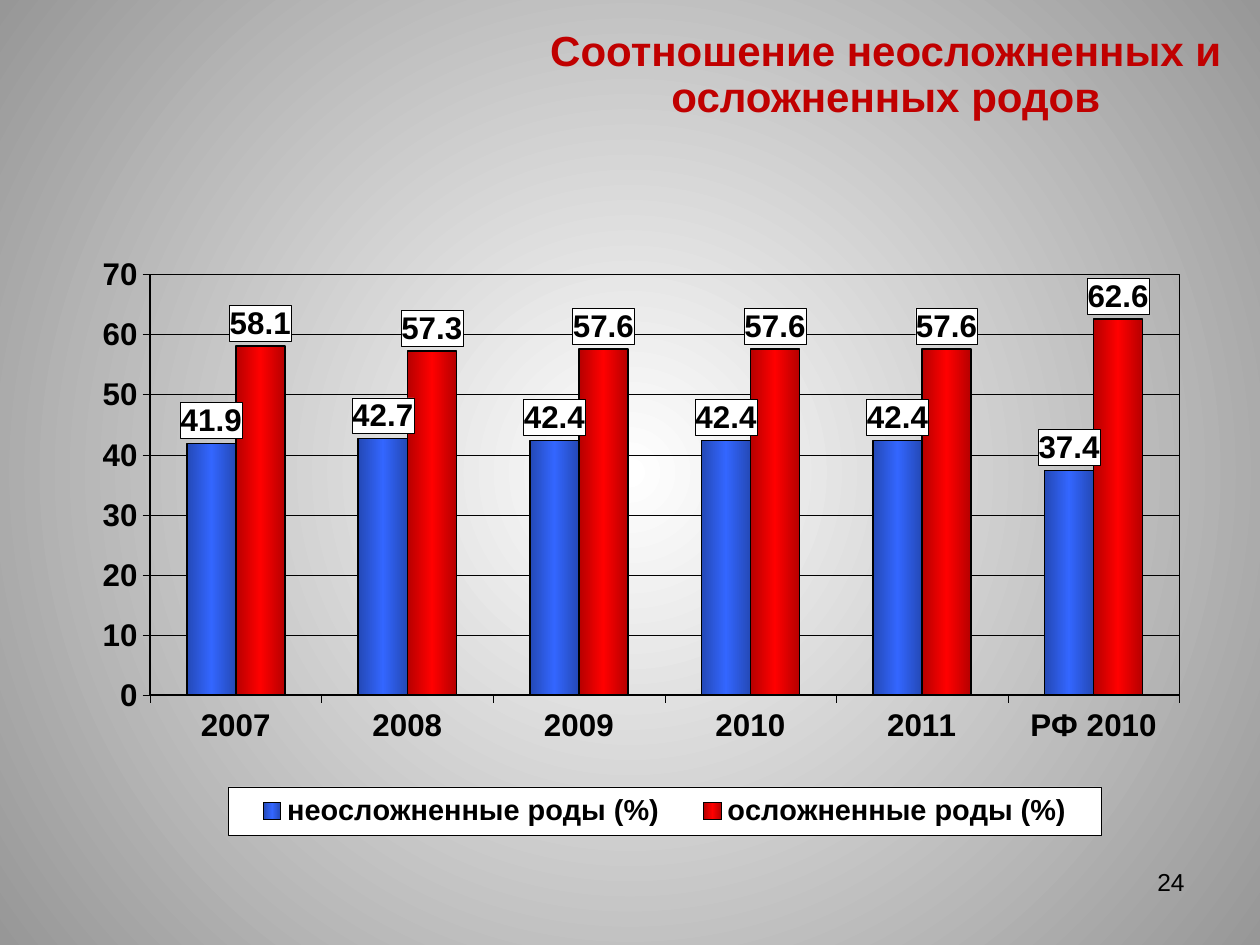
import pptx
import pptx.util
import pptx.oxml
import pptx.oxml.ns
import pptx.chart.data
import pptx.dml.color
import pptx.enum.chart
import pptx.enum.text

Pt = pptx.util.Pt
RGB = pptx.dml.color.RGBColor.from_string
qn = pptx.oxml.ns.qn
enum = pptx.enum.chart
text = pptx.enum.text
names = pptx.oxml.ns.nsdecls("a", "c")
hues = {"black": "000000", "white": "FFFFFF", "gray": "979797", "title": "C00000",
        "navy": "2449B6", "blue": "3366FF", "wine": "B60000", "red": "FF0000"}


def grade(root, stops, shade):
    grad = root.find(".//" + qn("a:gradFill"))
    for part in list(grad):
        grad.remove(part)
    step = 100000 // (len(stops) - 1)
    gs = "".join(f'<a:gs pos="{i * step}"><a:srgbClr val="{hues[s]}"/></a:gs>'
                 for i, s in enumerate(stops))
    new = pptx.oxml.parse_xml(f"<a:gradFill {names}><a:gsLst>{gs}</a:gsLst>{shade}</a:gradFill>")
    for part in list(new):
        grad.append(part)


def frame(fill, width):
    return pptx.oxml.parse_xml(
        f'<c:spPr {names}>{fill}<a:ln w="{Pt(width)}"><a:solidFill>'
        f'<a:srgbClr val="{hues["black"]}"/></a:solidFill></a:ln></c:spPr>')


deck = pptx.Presentation()
deck.slide_width, deck.slide_height = Pt(720), Pt(540)
slide = deck.slides.add_slide(deck.slide_layouts[5])
slide.background.fill.gradient()
grade(slide.element, ["white", "gray"],
      '<a:path path="circle"><a:fillToRect l="50000" t="50000" r="50000" b="50000"/></a:path>')

data = pptx.chart.data.CategoryChartData(number_format="0.0")
data.categories = ["2007", "2008", "2009", "2010", "2011", "РФ 2010"]
data.add_series("неосложненные роды (%)", [41.9, 42.7, 42.4, 42.4, 42.4, 37.4])
data.add_series("осложненные роды (%)", [58.1, 57.3, 57.6, 57.6, 57.6, 62.6])
chart = slide.shapes.add_chart(enum.XL_CHART_TYPE.COLUMN_CLUSTERED, Pt(41), Pt(132.5),
                               Pt(639.4), Pt(348.5), data).chart
chart.has_title = False
chart.has_legend = True
legend = chart.legend
legend.position = enum.XL_LEGEND_POSITION.BOTTOM
legend.include_in_layout = False
plot = chart.plots[0]
plot.vary_by_categories = False
plot.gap_width, plot.overlap = 150, 0

cats, vals = chart.category_axis, chart.value_axis
vals.minimum_scale, vals.maximum_scale, vals.major_unit = 0, 70, 10
vals.tick_labels.number_format = "0"
vals.tick_labels.number_format_is_linked = False
vals.has_major_gridlines = True
for axis in (cats, vals):
    axis.major_tick_mark = enum.XL_TICK_MARK.OUTSIDE
for line in (cats.format.line, vals.format.line, vals.major_gridlines.format.line):
    line.width = Pt(0.25)
    line.color.rgb = RGB(hues["black"])

fonts = [(chart.font, 17.9), (cats.tick_labels.font, 17.9),
         (vals.tick_labels.font, 17.9), (legend.font, 16.5)]
white = f'<a:solidFill><a:srgbClr val="{hues["white"]}"/></a:solidFill>'
for bar, (edge, core) in zip(plot.series, [("navy", "blue"), ("wine", "red")]):
    bar.format.fill.gradient()
    grade(bar._element, [edge, core, edge], '<a:lin ang="0" scaled="1"/>')
    bar.format.line.width = Pt(1)
    bar.format.line.color.rgb = RGB(hues["black"])
    tags = bar.data_labels
    tags.show_value = True
    tags.number_format = "0.0"
    tags.number_format_is_linked = False
    tags.position = enum.XL_LABEL_POSITION.OUTSIDE_END
    fonts.append((tags.font, 17.9))
    tags._element.find(qn("c:txPr")).addprevious(frame(white, 0.25))
for font, size in fonts:
    font.name, font.size, font.bold = "Arial", Pt(size), True
    font.color.rgb = RGB(hues["black"])

area = chart._chartSpace.find(".//" + qn("c:plotArea"))
area.append(frame("<a:noFill/>", 1))
key = legend._element
key.find(qn("c:txPr")).addprevious(frame(white, 0.25))
for root, spot, inner in [(area, (0.07, 0.07, 0.92, 0.69), True),
                          (key, (0.14, 0.91, 0.78, 0.08), False)]:
    for old in root.findall(qn("c:layout")):
        root.remove(old)
    target = '<c:layoutTarget val="inner"/>' if inner else ""
    sides = "".join(f'<c:{n}Mode val="edge"/>' for n in "xy")
    sides += "".join(f'<c:{n} val="{v}"/>' for n, v in zip("xywh", spot))
    root.insert(0 if inner else 1, pptx.oxml.parse_xml(
        f"<c:layout {names}><c:manualLayout>{target}{sides}</c:manualLayout></c:layout>"))

title = slide.shapes.title
title.left, title.top, title.width, title.height = Pt(292.3), Pt(9.4), Pt(427.7), Pt(67.7)
page = slide.shapes.add_textbox(Pt(516), Pt(492), Pt(168), Pt(37.5))
for box, words, size, hue, bold, align in [
        (title, "Соотношение неосложненных и осложненных родов", 24, "title", True, text.PP_ALIGN.CENTER),
        (page, "24", 14, "black", False, text.PP_ALIGN.RIGHT)]:
    box.text_frame.word_wrap = True
    para = box.text_frame.paragraphs[0]
    para.alignment = align
    run = para.add_run()
    run.text = words
    run.font.name, run.font.size, run.font.bold = "Arial", Pt(size), bold
    run.font.color.rgb = RGB(hues[hue])
title.text_frame.vertical_anchor = text.MSO_ANCHOR.MIDDLE
title.text_frame.paragraphs[0].line_spacing = 0.9

deck.save("out.pptx")
